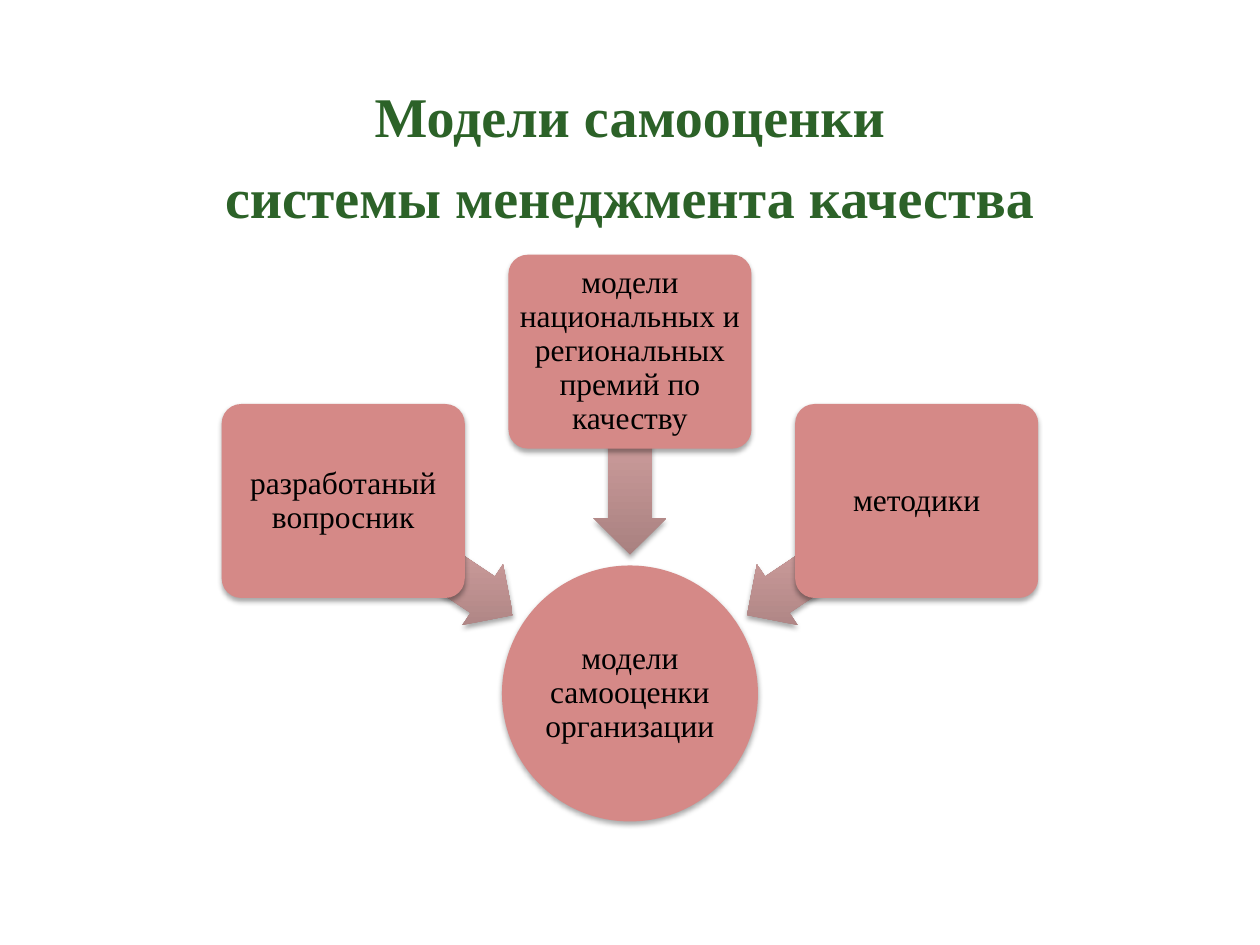
from lxml.etree import SubElement as Sub
from pptx import Presentation as Deck
from pptx.dml.color import RGBColor as RGB
from pptx.enum.shapes import MSO_SHAPE as Kind
from pptx.enum.text import MSO_ANCHOR as Anchor, PP_ALIGN as Align
from pptx.oxml.ns import qn
from pptx.util import Cm, Pt

HUES = {"box": "D58987", "ink": "000000", "head": "2C6228",
        "dark": "A98180", "mid": "DBA7A7", "pale": "DDA7A6"}
BODY = {"size": Pt(18), "name": "Times New Roman", "bold": False}
HEAD = {"size": Pt(32), "name": "Times New Roman", "bold": True}
MID = 12.7


class Page:
    """Holds the style and the current slide and draws each kind of element."""

    def __init__(self, deck):
        self.slide = deck.slides.add_slide(deck.slide_layouts[6])

    def label(self, shape, text, font, hue, gap, pad):
        frame = shape.text_frame
        look = {"word_wrap": True, "vertical_anchor": Anchor.MIDDLE,
                "margin_left": pad, "margin_right": pad,
                "margin_top": pad, "margin_bottom": pad}
        for key, val in look.items():
            setattr(frame, key, val)
        frame.text = text
        para = frame.paragraphs[0]
        para.alignment, para.line_spacing = Align.CENTER, gap
        for run in para.runs:
            for key, val in font.items():
                setattr(run.font, key, val)
            run.font.color.rgb = RGB.from_string(HUES[hue])

    def shade(self, shape):
        shape.line.fill.background()
        shape.shadow.inherit = False
        glow = shape._element.spPr.find(qn("a:effectLst"))
        drop = Sub(glow, qn("a:outerShdw"), blurRad=str(Pt(3.1)),
                   dist=str(Pt(1.8)), dir="5400000", rotWithShape="0")
        tint = Sub(drop, qn("a:srgbClr"), val=HUES["ink"])
        Sub(tint, qn("a:alpha"), val="35000")

    def shape(self, kind, x, y, wide, high):
        item = self.slide.shapes.add_shape(
            kind, Cm(x - wide / 2), Cm(y - high / 2), Cm(wide), Cm(high))
        self.shade(item)
        return item

    def node(self, kind, x, y, wide, high, text):
        item = self.shape(kind, x, y, wide, high)
        item.fill.solid()
        item.fill.fore_color.rgb = RGB.from_string(HUES["box"])
        if kind == Kind.ROUNDED_RECTANGLE:
            item.adjustments[0] = 0.1
        self.label(item, text, BODY, "ink", 0.9, 0)

    def arrow(self, x, y, turn):
        item = self.shape(Kind.LEFT_ARROW, x, y, 4.12, 1.47)
        item.adjustments[0], item.adjustments[1] = 0.6, 0.5
        item.rotation = turn
        item.fill.gradient()
        grad = item._element.spPr.find(qn("a:gradFill"))
        grad.clear()
        grad.set("rotWithShape", "0")
        stops = Sub(grad, qn("a:gsLst"))
        for pos, hue in ((0, "dark"), (80, "mid"), (100, "pale")):
            stop = Sub(stops, qn("a:gs"), pos=str(pos * 1000))
            Sub(stop, qn("a:srgbClr"), val=HUES[hue])
        Sub(grad, qn("a:lin"), ang="16200000", scaled="0")

    def title(self, text):
        box = self.slide.shapes.add_textbox(0, Cm(1), Cm(2 * MID), Cm(4))
        self.label(box, text, HEAD, "head", 1.2, Cm(0.13))


def main():
    deck = Deck()
    deck.slide_width, deck.slide_height = Cm(2 * MID), Cm(19.05)
    page = Page(deck)
    page.node(Kind.OVAL, MID, 13.98, 5.16, 5.16, "модели самооценки организации")
    models = (
        (-1, 10.1, 11.25, 213.9, "разработаный вопросник"),
        (0, 7.09, 9.12, 270, "модели национальных и региональных премий по качеству"),
        (1, 10.1, 11.25, 326.1, "методики"),
    )
    for side, y, low, turn, text in models:
        page.arrow(MID + side * 4.07, low, turn)
        page.node(Kind.ROUNDED_RECTANGLE, MID + side * 5.78, y, 4.9, 3.91, text)
    page.title("Модели самооценки\vсистемы менеджмента качества")
    deck.save("out.pptx")


if __name__ == "__main__":
    main()
